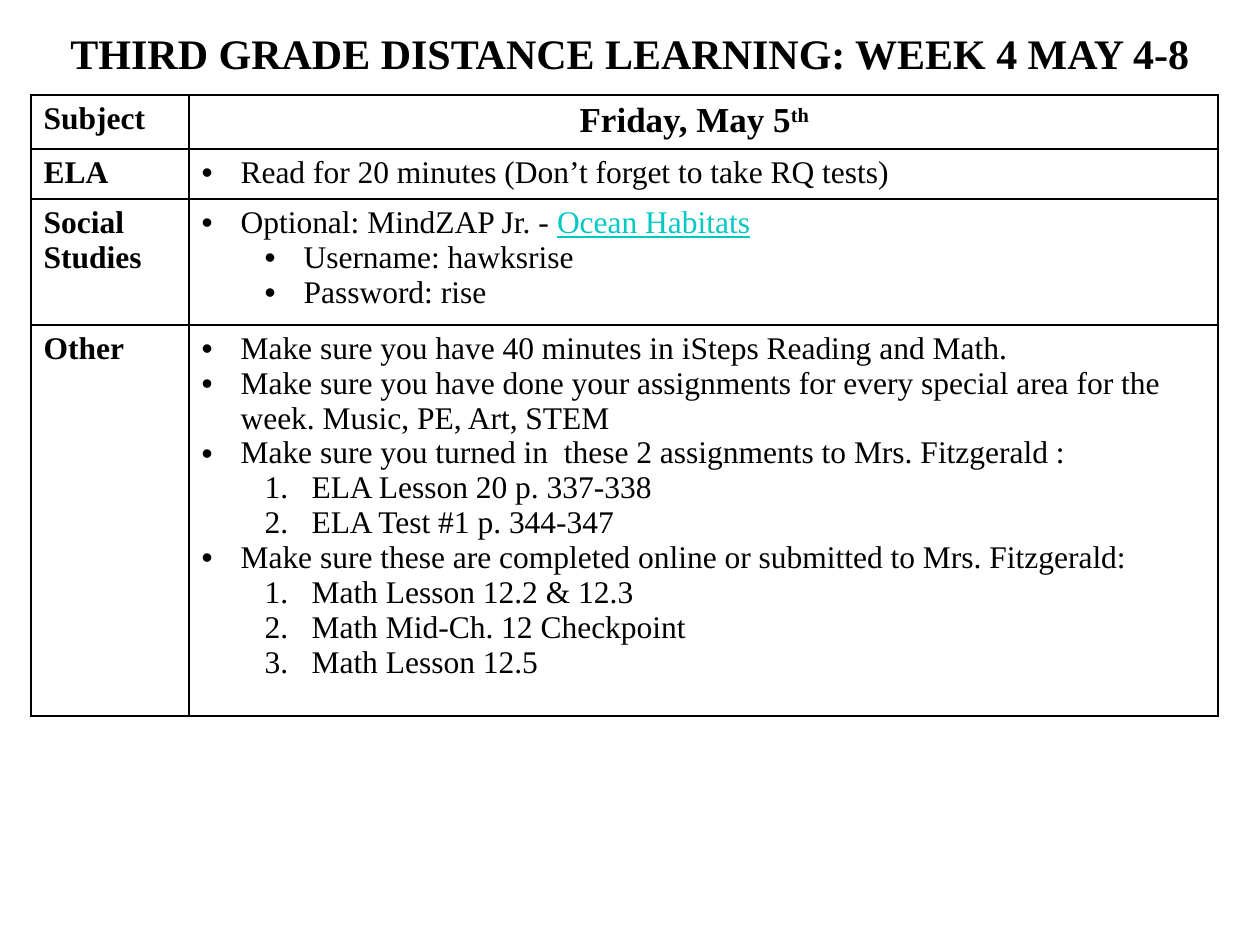
from lxml.etree import SubElement
from pptx import Presentation
from pptx.dml.color import RGBColor as Rgb
from pptx.enum.text import MSO_ANCHOR as Anchor, MSO_AUTO_SIZE as AutoSize, PP_ALIGN as Align
from pptx.oxml import parse_xml
from pptx.oxml.ns import nsdecls, qn
from pptx.util import Pt

PX_PER_INCH = 126
FONT = "Times New Roman"
COLOURS = {"text": "000000", "paper": "FFFFFF", "link": "00C8C3", "border": "000000"}
COLUMN_WIDTHS = (158, 1029)
ROW_HEIGHTS = (54, 50, 126, 391)

# Kind of list item: level, left margin and hanging indent in px
LIST_KINDS = {"bullet": (0, 39, 39), "sub": (1, 102, 39), "number": (1, 110, 47)}

SUBJECTS = [
    ("ELA", [("bullet", "Read for 20 minutes (Don’t forget to take RQ tests)")]),
    ("Social Studies", [
        ("bullet", "Optional: MindZAP Jr. - ", "Ocean Habitats"),
        ("sub", "Username: hawksrise"),
        ("sub", "Password: rise"),
    ]),
    ("Other", [
        ("bullet", "Make sure you have 40 minutes in iSteps Reading and Math."),
        ("bullet", "Make sure you have done your assignments for every special area "
                   "for the week. Music, PE, Art, STEM"),
        ("bullet", "Make sure you turned in  these 2 assignments to Mrs. Fitzgerald :"),
        ("number", "ELA Lesson 20 p. 337-338"),
        ("number", "ELA Test #1 p. 344-347"),
        ("bullet", "Make sure these are completed online or submitted to Mrs. Fitzgerald:"),
        ("number", "Math Lesson 12.2 & 12.3"),
        ("number", "Math Mid-Ch. 12 Checkpoint"),
        ("number", "Math Lesson 12.5"),
    ]),
]


def px(length):
    return round(length * 914400 / PX_PER_INCH)


def add_span(para, text, size=18, bold=False, colour="text"):
    span = para.add_run()
    span.text = text
    font = span.font
    font.name, font.size, font.bold = FONT, Pt(size), bold
    font.color.rgb = Rgb.from_string(COLOURS[colour])
    return span


def add_title(page):
    box = page.shapes.title
    box.left, box.top, box.width, box.height = px(0), px(21), px(1260), px(63)
    frame = box.text_frame
    frame.auto_size = AutoSize.NONE
    frame.vertical_anchor = Anchor.MIDDLE
    para = frame.paragraphs[0]
    para.alignment = Align.CENTER
    add_span(para, "THIRD GRADE DISTANCE LEARNING: WEEK 4 MAY 4-8", 24, True)


def style_cell(cell):
    """Give the cell a plain fill and a thin line on all four sides."""
    properties = cell._tc.get_or_add_tcPr()
    for index, side in enumerate("LRTB"):
        properties.insert(index, parse_xml(
            f'<a:ln{side} {nsdecls("a")} w="12700"><a:solidFill>'
            f'<a:srgbClr val="{COLOURS["border"]}"/></a:solidFill></a:ln{side}>'))
    cell.fill.solid()
    cell.fill.fore_color.rgb = Rgb.from_string(COLOURS["paper"])


def format_list_item(para, kind):
    level, margin, hanging = LIST_KINDS[kind]
    para.level = level
    properties = para._p.get_or_add_pPr()
    properties.set("marL", str(px(margin)))
    properties.set("indent", str(-px(hanging)))
    if kind == "number":
        SubElement(properties, qn("a:buFont"), typeface="+mj-lt")
        SubElement(properties, qn("a:buAutoNum"), type="arabicPeriod")
    else:
        SubElement(properties, qn("a:buFont"), typeface="Arial")
        SubElement(properties, qn("a:buChar"), char="•")


def fill_list(cell, items):
    frame = cell.text_frame
    for index, (kind, text, *links) in enumerate(items):
        para = frame.add_paragraph() if index else frame.paragraphs[0]
        format_list_item(para, kind)
        add_span(para, text)
        for link in links:
            add_span(para, link, colour="link").font.underline = True


def fill_date(cell):
    cell.margin_right = px(31)
    para = cell.text_frame.paragraphs[0]
    para.alignment = Align.CENTER
    add_span(para, "Friday, May 5", 20, True)
    ordinal = add_span(para, "th", 20, True)
    ordinal.font._element.set("baseline", "30000")


def add_schedule(page):
    frame = page.shapes.add_table(len(ROW_HEIGHTS), len(COLUMN_WIDTHS), px(31), px(95),
                                  px(sum(COLUMN_WIDTHS)), px(sum(ROW_HEIGHTS)))
    table = frame.table
    table.first_row = table.horz_banding = False
    for column, width in zip(table.columns, COLUMN_WIDTHS):
        column.width = px(width)
    for row, height in zip(table.rows, ROW_HEIGHTS):
        row.height = px(height)
    for cell in table.iter_cells():
        style_cell(cell)

    fill_date(table.cell(0, 1))
    for row, heading in enumerate(["Subject"] + [name for name, _ in SUBJECTS]):
        add_span(table.cell(row, 0).text_frame.paragraphs[0], heading, bold=True)
    for row, (_, items) in enumerate(SUBJECTS, start=1):
        fill_list(table.cell(row, 1), items)


def main():
    deck = Presentation()
    deck.slide_width, deck.slide_height = px(1260), px(945)
    page = deck.slides.add_slide(deck.slide_layouts[5])
    add_schedule(page)
    add_title(page)
    deck.save("out.pptx")


if __name__ == "__main__":
    main()
